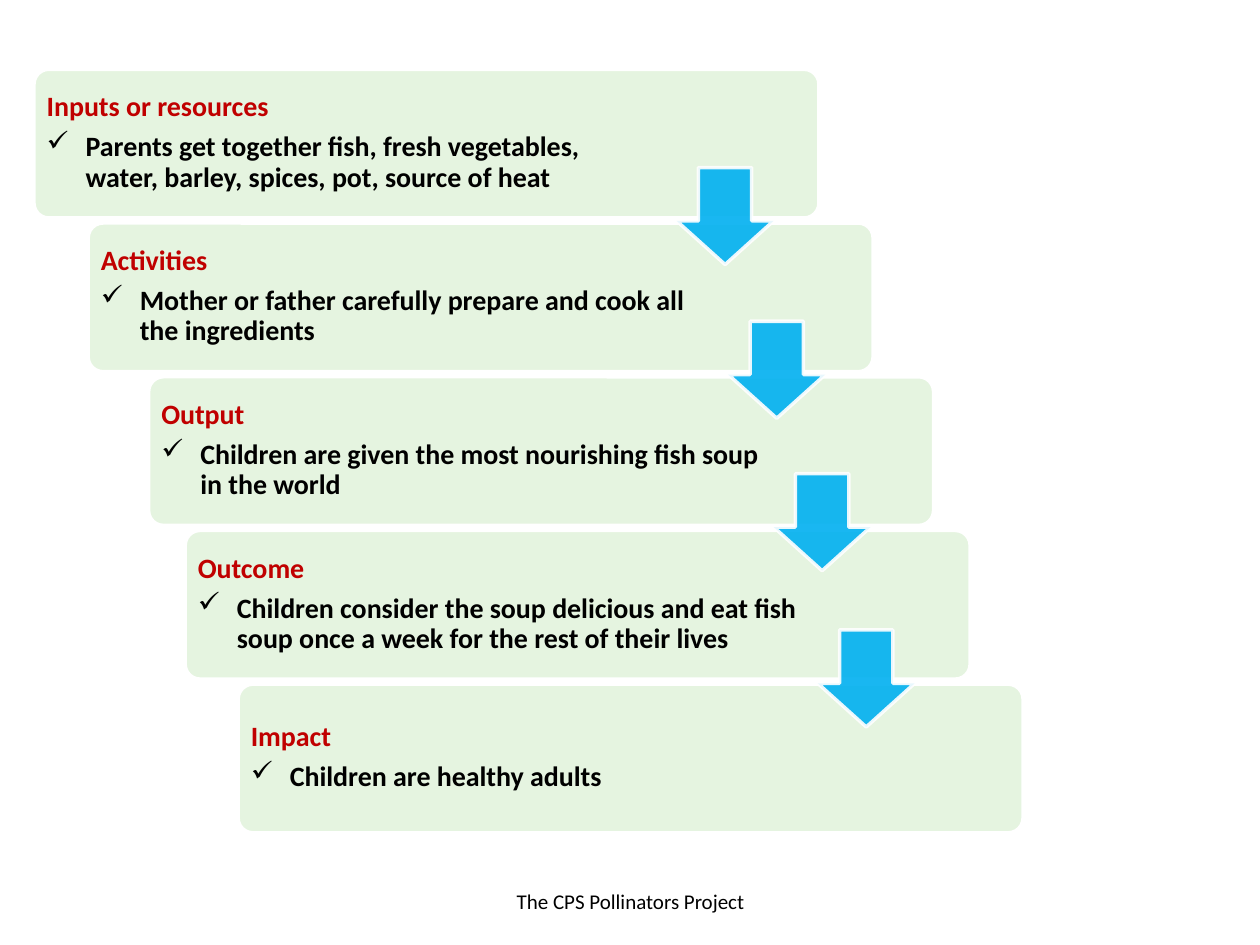
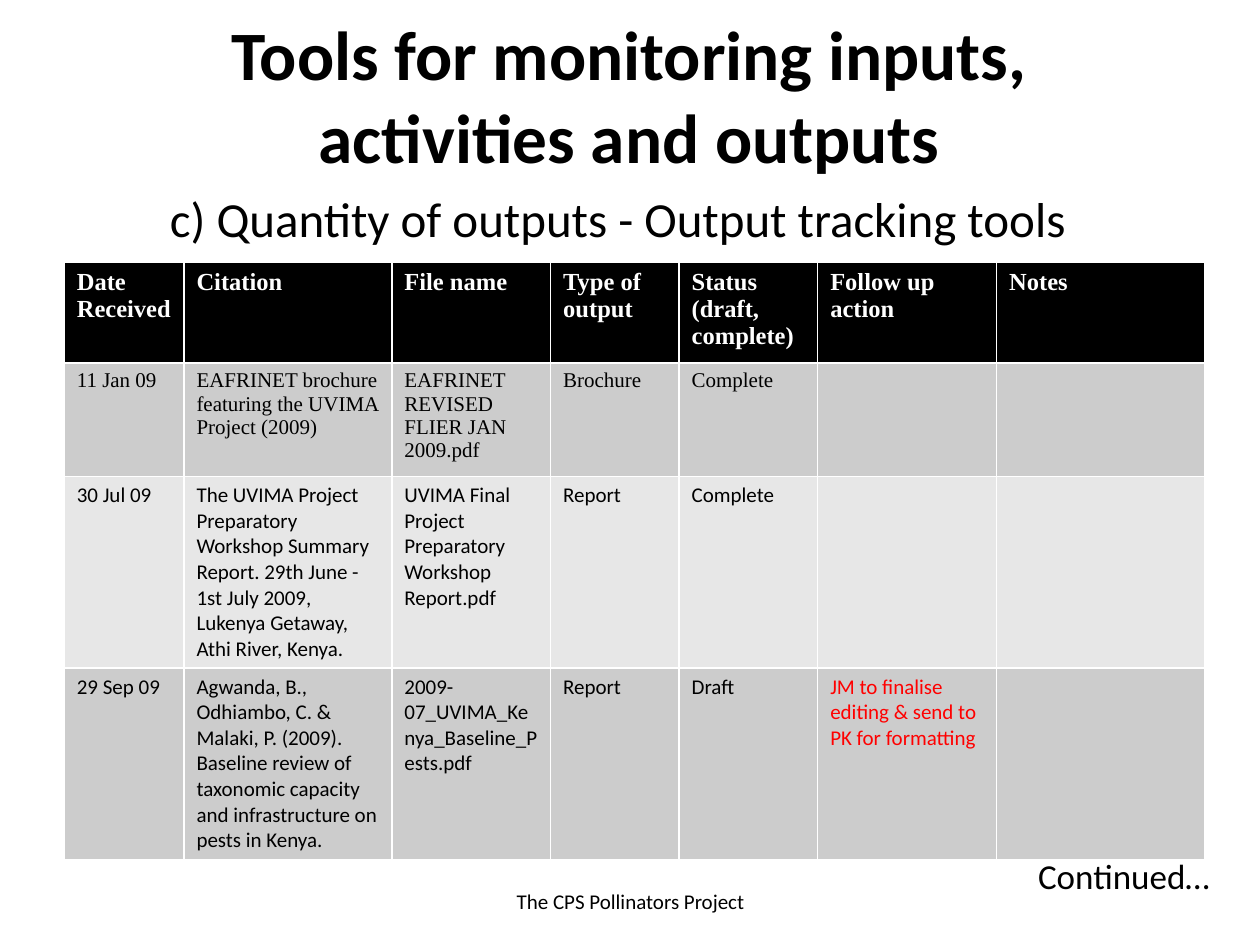
from lxml import etree
from pptx import Presentation
from pptx.dml.color import RGBColor
from pptx.enum.shapes import MSO_SHAPE
from pptx.enum.text import MSO_ANCHOR, MSO_AUTO_SIZE, PP_ALIGN
from pptx.oxml.ns import qn
from pptx.util import Inches, Pt

ROUND = MSO_SHAPE.ROUNDED_RECTANGLE
ARROW = MSO_SHAPE.DOWN_ARROW
MIDDLE = MSO_ANCHOR.MIDDLE
LEFT, CENTER, RIGHT = PP_ALIGN.LEFT, PP_ALIGN.CENTER, PP_ALIGN.RIGHT
FIXED = MSO_AUTO_SIZE.NONE

BLACK, WHITE, RED = "000000", "FFFFFF", "FF0000"
GREEN, CRIMSON, BLUE = "E5F4E0", "C00000", "00B0F0"
DARK, LIGHT = "CCCCCC", "E7E7E7"
SANS, SERIF = "Calibri", "Times New Roman"
TITLE_ONLY, BLANK = 5, 6

STEPS = [
    (0.27, 4.81, "Inputs or resources",
     "Parents get together fish, fresh vegetables, water, barley, spices, pot, source of heat"),
    (0.7, 4.92, "Activities",
     "Mother or father carefully prepare and cook all the ingredients"),
    (1.18, 4.92, "Output",
     "Children are given the most nourishing fish soup in the world"),
    (1.47, 4.92, "Outcome",
     "Children consider the soup delicious and eat fish soup once a week for the rest of their lives"),
    (1.89, 4.92, "Impact", "Children are healthy adults"),
]
ARROWS = [(5.37, 1.33), (5.78, 2.55), (6.14, 3.76), (6.49, 5)]

WIDTHS = [0.95, 1.65, 1.26, 1.02, 1.1, 1.42, 1.65]
HEIGHTS = [0.74, 0.83, 1.52, 1.52]
ROWS = [
    ["Date Received", "Citation", "File name", "Type of output",
     "Status (draft, complete)", "Follow up action", "Notes"],
    ["11 Jan 09", "EAFRINET brochure featuring the UVIMA Project (2009)",
     "EAFRINET REVISED FLIER JAN 2009.pdf", "Brochure", "Complete", "", ""],
    ["30 Jul 09",
     "The UVIMA Project Preparatory Workshop Summary Report. 29th June - 1st July 2009, "
     "Lukenya Getaway, Athi River, Kenya.",
     "UVIMA Final Project Preparatory Workshop Report.pdf", "Report", "Complete", "", ""],
    ["29 Sep 09",
     "Agwanda, B., Odhiambo, C. & Malaki, P. (2009). Baseline review of taxonomic capacity "
     "and infrastructure on pests in Kenya.",
     "2009-07_UVIMA_Kenya_Baseline_Pests.pdf", "Report", "Draft",
     "JM to finalise editing & send to PK for formatting", ""],
]
LOOKS = [
    (BLACK, WHITE, SERIF, 14, True),
    (DARK, BLACK, SERIF, 12, False),
    (LIGHT, BLACK, SANS, 12, False),
    (DARK, BLACK, SANS, 12, False),
]
ACTION = 5


def paint(target, color):
    target.rgb = RGBColor.from_string(color)


def style(para, size, color=BLACK, bold=False, face=SANS):
    font = para.font
    font.name, font.size, font.bold = face, Pt(size), bold
    paint(font.color, color)


def text_box(slide, x, y, w, h):
    box = slide.shapes.add_textbox(Inches(x), Inches(y), Inches(w), Inches(h))
    box.text_frame.word_wrap = True
    return box.text_frame


def label(slide, text, place, size, align=LEFT):
    frame = text_box(slide, *place)
    para = frame.paragraphs[0]
    para.text, para.alignment = text, align
    style(para, size)
    return frame


def footer(slide):
    frame = label(slide, "The CPS Pollinators Project", (3.42, 6.95, 3.17, 0.4), 12, CENTER)
    frame.vertical_anchor = MIDDLE


def shape(slide, kind, place, color, adjust):
    item = slide.shapes.add_shape(kind, *map(Inches, place))
    item.shadow.inherit = False
    item.fill.solid()
    paint(item.fill.fore_color, color)
    paint(item.line.color, WHITE)
    item.line.width = Pt(2)
    for i, value in enumerate(adjust):
        item.adjustments[i] = value
    return item


def check(para):
    props = para._p.get_or_add_pPr()
    props.set("marL", str(Inches(0.31)))
    props.set("indent", str(Inches(-0.31)))
    etree.SubElement(props, qn("a:buChar"), char="✓")


def card(slide, x, y, width, head, body):
    shape(slide, ROUND, (x, y, 6.23, 1.18), GREEN, [0.1])
    frame = text_box(slide, x + 0.03, y + 0.03, width, 1.11)
    frame.vertical_anchor = MIDDLE
    frame.margin_left = frame.margin_right = Inches(0.07)
    frame.margin_top = frame.margin_bottom = Inches(0.07)
    first, second = frame.paragraphs[0], frame.add_paragraph()
    check(second)
    for para, text, color, gap in ((first, head, CRIMSON, 5.6), (second, body, BLACK, 2.4)):
        para.text = text
        para.line_spacing = 0.9
        para.space_after = Pt(gap)
        style(para, 16, color, True)


def arrow(slide, x, y):
    item = shape(slide, ARROW, (x, y, 0.77, 0.77), BLUE, [0.55, 0.45])
    for tint in item._element.spPr.iter(qn("a:srgbClr")):
        etree.SubElement(tint, qn("a:alpha"), val="90000")


def heading(slide, text):
    title = slide.shapes.title
    title.left, title.top, title.width, title.height = map(Inches, (0.89, 0.1, 8.21, 1.3))
    frame = title.text_frame
    frame.text = text
    frame.auto_size, frame.vertical_anchor = FIXED, MIDDLE
    frame.paragraphs[0].alignment = CENTER
    style(frame.paragraphs[0], 39.6, bold=True)


def tracker(slide):
    place = map(Inches, (0.51, 2.08, sum(WIDTHS), sum(HEIGHTS)))
    grid = slide.shapes.add_table(len(ROWS), len(WIDTHS), *place).table
    for col, width in zip(grid.columns, WIDTHS):
        col.width = Inches(width)
    for r, (texts, look) in enumerate(zip(ROWS, LOOKS)):
        fill, color, face, size, bold = look
        grid.rows[r].height = Inches(HEIGHTS[r])
        for c, text in enumerate(texts):
            cell = grid.cell(r, c)
            cell.fill.solid()
            paint(cell.fill.fore_color, fill)
            cell.text = text
            ink = RED if r and c == ACTION else color
            style(cell.text_frame.paragraphs[0], size, ink, bold, face)


def chain(deck):
    slide = deck.slides.add_slide(deck.slide_layouts[BLANK])
    footer(slide)
    for i, (x, width, head, body) in enumerate(STEPS):
        card(slide, x, 0.55 + 1.22 * i, width, head, body)
    for x, y in ARROWS:
        arrow(slide, x, y)


def tools(deck):
    slide = deck.slides.add_slide(deck.slide_layouts[TITLE_ONLY])
    footer(slide)
    heading(slide, "Tools for monitoring inputs, activities and outputs")
    label(slide, "c) Quantity of outputs - Output tracking tools", (1.25, 1.45, 7.42, 0.76), 28)
    label(slide, "Continued…", (7.64, 6.73, 2.06, 0.49), 20, RIGHT)
    tracker(slide)


def main():
    deck = Presentation()
    deck.slide_width, deck.slide_height = Inches(10), Inches(7.5)
    chain(deck)
    tools(deck)
    deck.save("out.pptx")


if __name__ == "__main__":
    main()
